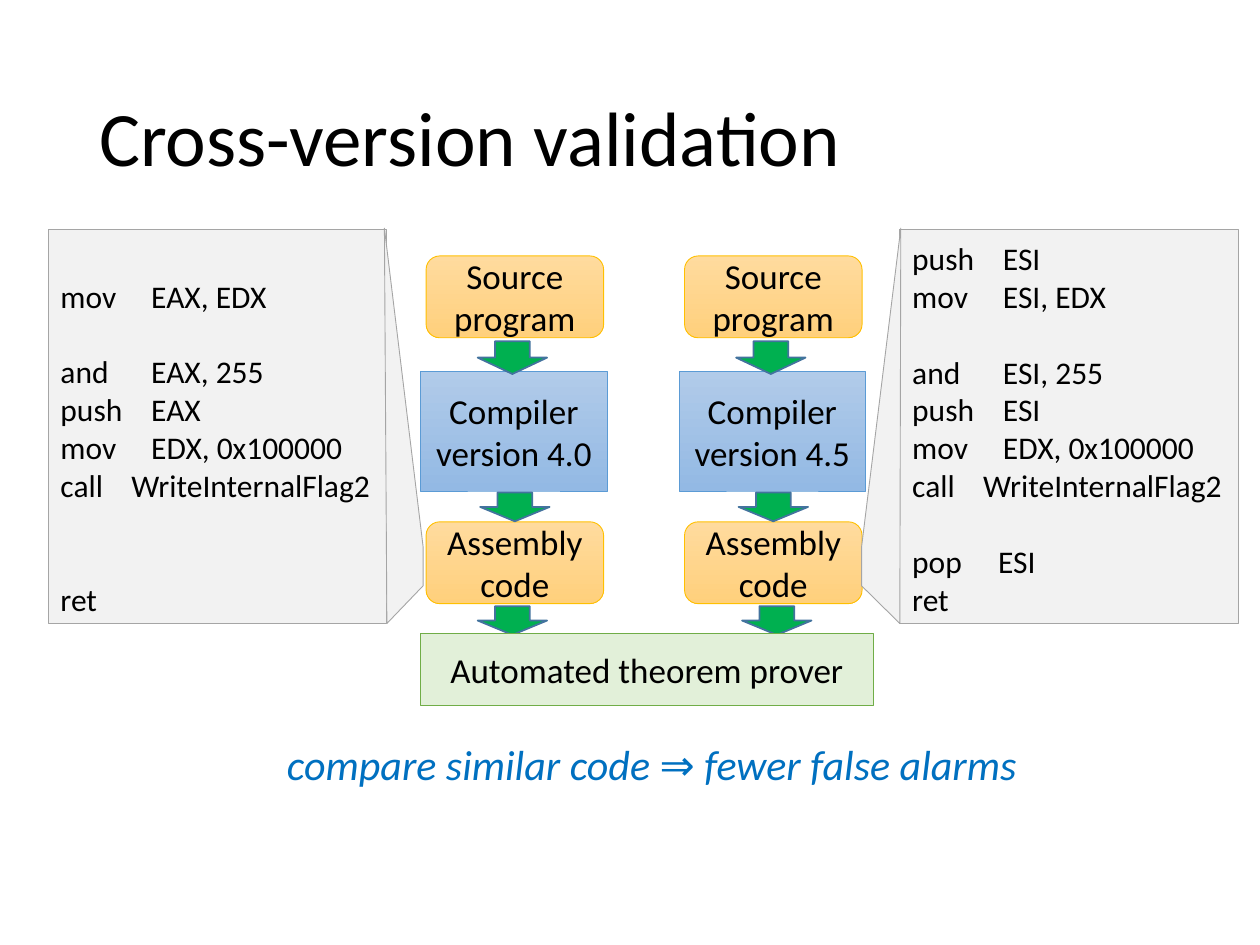
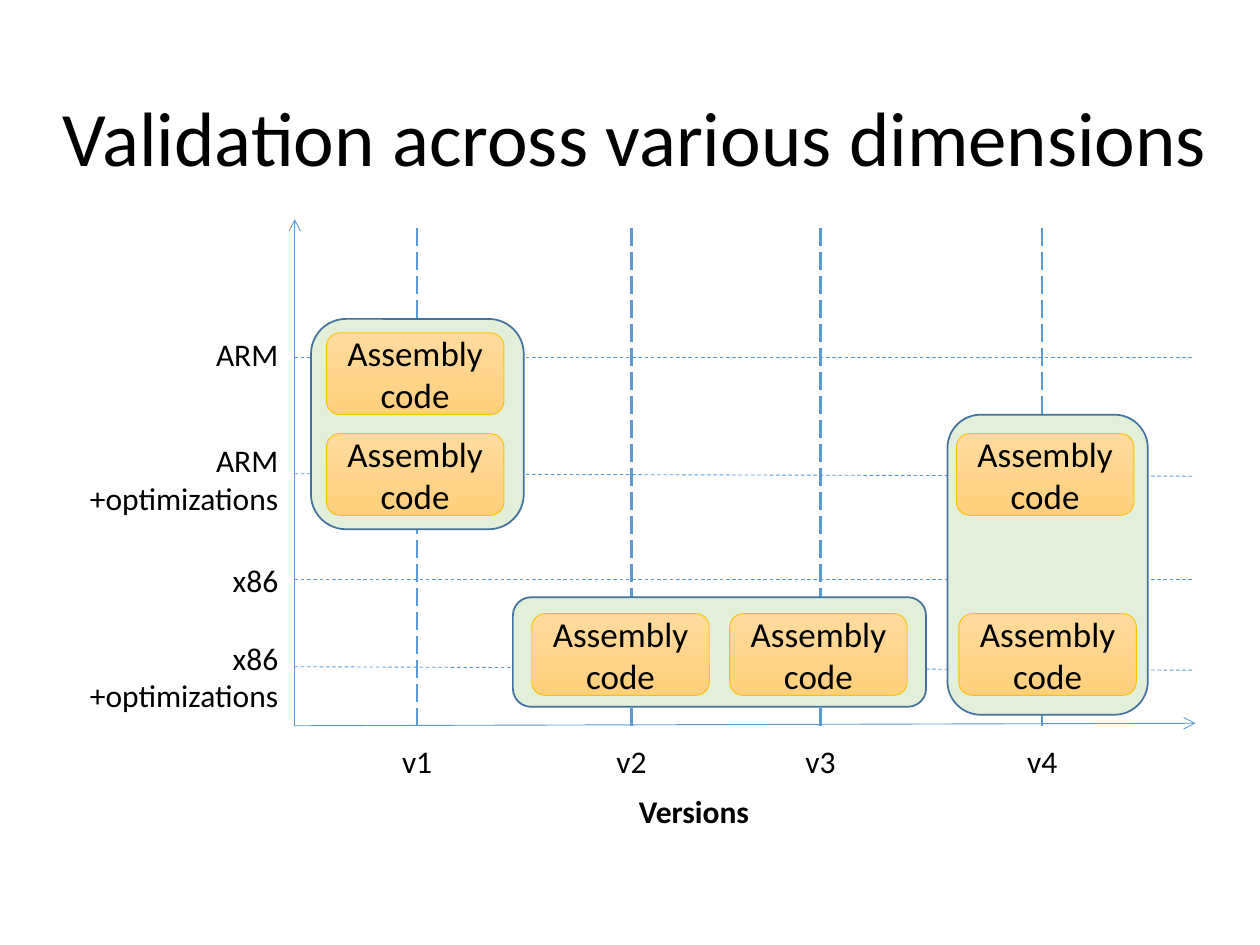
from lxml import etree
from pptx import Presentation
from pptx.dml.color import RGBColor
from pptx.enum.dml import MSO_LINE
from pptx.enum.shapes import MSO_CONNECTOR, MSO_SHAPE
from pptx.enum.text import MSO_ANCHOR, PP_ALIGN
from pptx.oxml.ns import qn
from pptx.util import Cm, Pt

FONT = "Calibri"
BLACK = RGBColor(0x00, 0x00, 0x00)
BLUE = RGBColor(0x5B, 0x9B, 0xD5)
DARK_BLUE = RGBColor(0x43, 0x73, 0x9E)
MESSAGE_BLUE = RGBColor(0x00, 0x70, 0xC0)
BLUE_FADE = (RGBColor(0xB1, 0xCB, 0xE9), RGBColor(0x93, 0xB9, 0xE4))
ORANGE = RGBColor(0xFF, 0xC0, 0x00)
ORANGE_FADE = (RGBColor(0xFF, 0xDB, 0x9E), RGBColor(0xFF, 0xD0, 0x7C))
ARROW_GREEN = RGBColor(0x00, 0xB0, 0x50)
GREEN = RGBColor(0x70, 0xAD, 0x47)
PALE_GREEN = RGBColor(0xE2, 0xF0, 0xD9)
GREY = RGBColor(0xA5, 0xA5, 0xA5)
PALE_GREY = RGBColor(0xF2, 0xF2, 0xF2)

RECTANGLE = MSO_SHAPE.RECTANGLE
ROUNDED = MSO_SHAPE.ROUNDED_RECTANGLE
DOWN_ARROW = MSO_SHAPE.DOWN_ARROW
STRAIGHT = MSO_CONNECTOR.STRAIGHT
DASH, LONG_DASH = MSO_LINE.DASH, MSO_LINE.LONG_DASH
LEFT, CENTER, RIGHT = PP_ALIGN.LEFT, PP_ALIGN.CENTER, PP_ALIGN.RIGHT
TOP, MIDDLE, BOTTOM = MSO_ANCHOR.TOP, MSO_ANCHOR.MIDDLE, MSO_ANCHOR.BOTTOM

CODE_LINE = 21.7  # points from one line of code to the next
OPERAND_TAB = 1.83
OPERAND_TABS = {"call": 1.43, "pop": 1.73}


class Deck:
    """Holds the shared style and the current slide; lengths are in cm."""

    def __init__(self):
        self.presentation = Presentation()
        self.presentation.slide_width = Cm(25.4)
        self.presentation.slide_height = Cm(19.05)
        self.slide = None

    def new_slide(self, title, left, width):
        layout = self.presentation.slide_layouts[6]
        self.slide = self.presentation.slides.add_slide(layout)
        box = self.label(title, left, 1.02, width, 3.68, size=44,
                         align=LEFT, anchor=MIDDLE, wrap=True)
        box.text_frame.paragraphs[0].line_spacing = 0.9

    def set_text(self, shape, text, size, align=CENTER, anchor=MIDDLE,
                 color=BLACK, bold=False, italic=False):
        frame = shape.text_frame
        frame.text = text
        frame.vertical_anchor = anchor
        for paragraph in frame.paragraphs:
            paragraph.alignment = align
            for run in paragraph.runs:
                font = run.font
                font.name, font.size = FONT, Pt(size)
                font.bold, font.italic = bold, italic
                font.color.rgb = color

    def label(self, text, left, top, width, height, size=18, align=CENTER,
              anchor=TOP, wrap=False, **style):
        box = self.slide.shapes.add_textbox(Cm(left), Cm(top), Cm(width), Cm(height))
        box.text_frame.word_wrap = wrap
        self.set_text(box, text, size, align, anchor, **style)
        return box

    def paint(self, shape, fill, line, line_width):
        shape.shadow.inherit = False
        if isinstance(fill, RGBColor):
            shape.fill.solid()
            shape.fill.fore_color.rgb = fill
        else:
            shape.fill.gradient()
            shape.fill.gradient_angle = 270
            for stop, color in zip(shape.fill.gradient_stops, fill):
                stop.color.rgb = color
        shape.line.color.rgb = line
        shape.line.width = Pt(line_width)

    def block(self, kind, left, top, width, height, fill, line,
              line_width=0.5, text=None):
        shape = self.slide.shapes.add_shape(
            kind, Cm(left), Cm(top), Cm(width), Cm(height))
        self.paint(shape, fill, line, line_width)
        if text:
            self.set_text(shape, text, 20)
        return shape

    def stage(self, text, left, top):
        self.block(ROUNDED, left, top, 3.58, 1.65, ORANGE_FADE, ORANGE, text=text)

    def down_arrow(self, left, top, height=0.58):
        self.block(DOWN_ARROW, left, top, 1.4, height, ARROW_GREEN, DARK_BLUE, 1)

    def code(self, left, lines):
        """Lines are (blank lines above, instruction, operands)."""
        shape = self.block(RECTANGLE, left, 4.62, 6.83, 7.95, PALE_GREY, GREY)
        text = "\n".join("\t".join(parts).rstrip() for _, *parts in lines)
        self.set_text(shape, text, 18, LEFT, BOTTOM)
        shape.text_frame.margin_right = 0
        for paragraph, (gap, name, _) in zip(shape.text_frame.paragraphs, lines):
            paragraph.space_before = Pt(gap * CODE_LINE)
            properties = paragraph._p.get_or_add_pPr()
            tabs = etree.SubElement(properties, qn("a:tabLst"))
            position = Cm(OPERAND_TABS.get(name, OPERAND_TAB))
            etree.SubElement(tabs, qn("a:tab"), pos=str(int(position)), algn="l")

    def outline(self, points):
        corners = [(Cm(x), Cm(y)) for x, y in points]
        builder = self.slide.shapes.build_freeform(*corners[0], scale=1.0)
        builder.add_line_segments(corners[1:], close=True)
        self.paint(builder.convert_to_shape(), PALE_GREY, GREY, 0.5)

    def line(self, start, end, width=0.5, dash=None, arrow=False):
        connector = self.slide.shapes.add_connector(
            STRAIGHT, *(Cm(value) for value in (*start, *end)))
        connector.line.color.rgb = BLUE
        connector.line.width = Pt(width)
        if dash:
            connector.line.dash_style = dash
        properties = connector._element.spPr
        if arrow:
            etree.SubElement(properties.find(qn("a:ln")), qn("a:tailEnd"), type="arrow")
        etree.SubElement(properties, qn("a:effectLst"))


def cross_version_slide(deck):
    deck.new_slide("Cross-version validation", 1.75, 21.89)

    # One pipeline per compiler version
    for shift, version, last_arrow in ((0, "4.0", 9.63), (5.21, "4.5", 14.96)):
        deck.block(RECTANGLE, 8.48 + shift, 7.49, 3.76, 2.41, BLUE_FADE, BLUE,
                   text=f"Compiler\nversion {version}")
        deck.stage("Source program", 8.59 + shift, 5.16)
        deck.stage("Assembly code", 8.59 + shift, 10.52)
        deck.down_arrow(9.68 + shift, 9.93)
        deck.down_arrow(9.63 + shift, 6.88, 0.66)
        deck.down_arrow(last_arrow, 12.22)
    deck.block(RECTANGLE, 8.48, 12.78, 9.12, 1.45, PALE_GREEN, GREEN,
               text="Automated theorem prover")

    # Assembly listings, each with a flap pointing at its stage
    deck.code(0.97, [
        (1, "mov", "EAX, EDX"),
        (1, "and", "EAX, 255"),
        (0, "push", "EAX"),
        (0, "mov", "EDX, 0x100000"),
        (0, "call", "WriteInternalFlag2"),
        (2, "ret", ""),
    ])
    deck.code(18.14, [
        (0, "push", "ESI"),
        (0, "mov", "ESI, EDX"),
        (1, "and", "ESI, 255"),
        (0, "push", "ESI"),
        (0, "mov", "EDX, 0x100000"),
        (0, "call", "WriteInternalFlag2"),
        (1, "pop", "ESI"),
        (0, "ret", ""),
    ])
    for tip, upper, lower in ((8.53, 7.75, 7.8), (17.37, 18.16, 18.14)):
        deck.outline([(tip, 11.02), (upper, 4.6), (lower, 12.57), (tip, 11.81)])

    deck.label("compare similar code ⇒ fewer false alarms", 5.38, 14.76, 15.52, 1.27,
               size=24, color=MESSAGE_BLUE, italic=True)


def dimensions_slide(deck):
    deck.new_slide("Validation across various dimensions", 1.02, 23.65)

    # Axes
    origin = (5.94, 14.63)
    deck.line(origin, (5.94, 4.42), arrow=True)
    deck.line(origin, (24.1, 14.58), arrow=True)

    # Target rows: label, label top, line start and end heights
    rows = (
        ("ARM", 6.63, 7.21, 7.21),
        ("ARM\n+optimizations", 8.76, 9.55, 9.6),
        ("x86", 11.18, 11.68, 11.68),
        ("x86\n+optimizations", 12.75, 13.44, 13.51),
    )
    for text, top, start, end in rows:
        deck.label(text, 1.47, top, 4.39, 1.02, align=RIGHT, wrap=True)
        deck.line((5.94, start), (24.05, end), dash=DASH)

    # Version columns
    for number, x in enumerate((8.41, 12.73, 16.54, 21.01), start=1):
        deck.line((x, 4.6), (x, 14.76), width=1.25, dash=LONG_DASH)
        deck.label(f"v{number}", x - 0.56, 14.83, 1.12, 1.02)
    deck.label("Versions", 12.62, 15.85, 2.74, 1.02, bold=True)

    # Compared pairs
    for frame in ((10.34, 12.04, 8.33, 2.21), (6.27, 6.43, 4.29, 4.24),
                  (19.1, 8.36, 4.04, 6.05)):
        deck.block(ROUNDED, *frame, PALE_GREEN, DARK_BLUE, 1)
    for left, top in ((6.58, 6.71), (6.58, 8.74), (10.72, 12.37),
                      (14.71, 12.37), (19.33, 12.37), (19.28, 8.74)):
        deck.stage("Assembly code", left, top)


def main():
    deck = Deck()
    cross_version_slide(deck)
    dimensions_slide(deck)
    deck.presentation.save("out.pptx")


if __name__ == "__main__":
    main()
